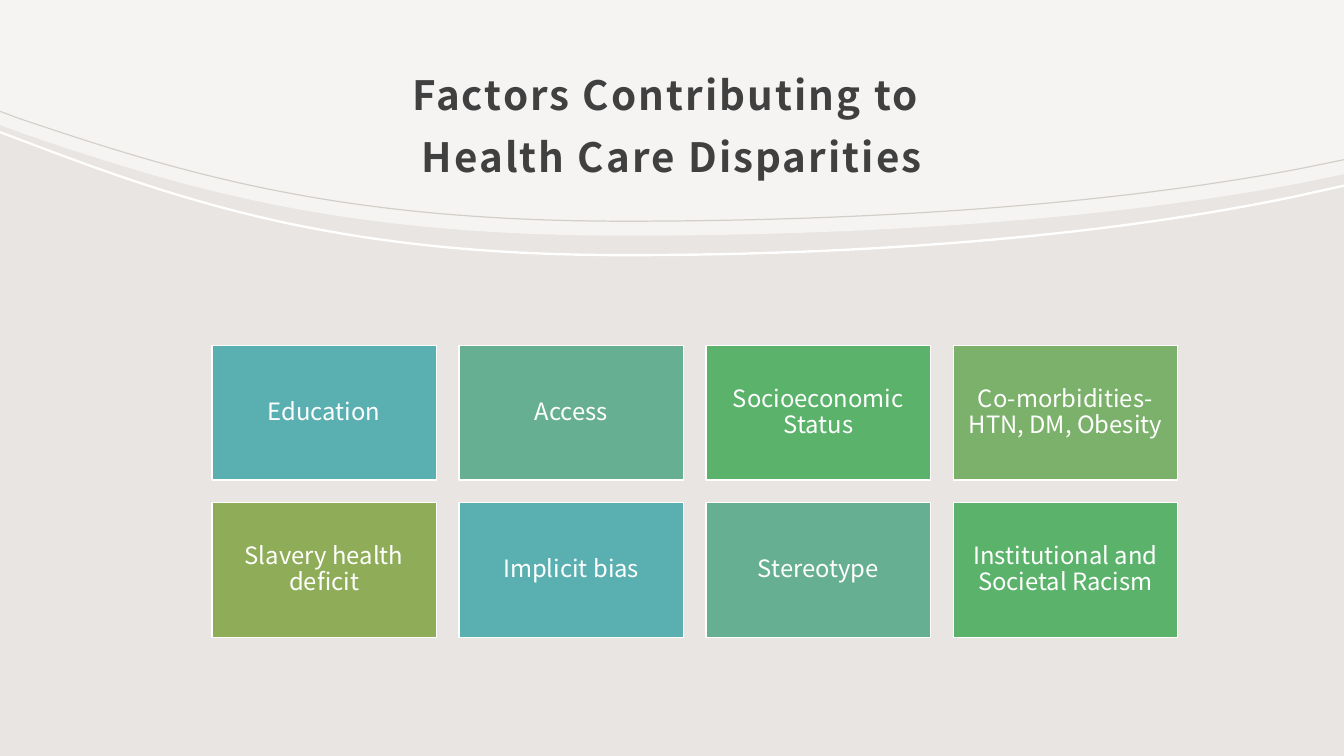
from copy import deepcopy
from pptx import Presentation
from pptx.dml.color import RGBColor
from pptx.enum.shapes import MSO_SHAPE
from pptx.enum.text import MSO_ANCHOR, MSO_AUTO_SIZE, PP_ALIGN
from pptx.oxml.ns import qn
from pptx.util import Cm, Pt
from lxml import etree

BACKGROUND = RGBColor(0xE8, 0xE5, 0xE2)
WHITE = RGBColor(0xFF, 0xFF, 0xFF)
GREY = RGBColor(0xD4, 0xCE, 0xC8)
DARK = RGBColor(0x40, 0x40, 0x40)
CARD_COLORS = [
    RGBColor(0x5A, 0xB0, 0xB1),
    RGBColor(0x67, 0xAF, 0x92),
    RGBColor(0x5B, 0xB3, 0x6B),
    RGBColor(0x7B, 0xB1, 0x6A),
    RGBColor(0x8F, 0xAD, 0x58),
]
FONT = "Noto Sans CJK JP"
WIDTH, HEIGHT = 33.87, 19.05
FACTORS = [
    "Education", "Access", "Socioeconomic Status", "Co-morbidities-HTN, DM, Obesity",
    "Slavery health deficit", "Implicit bias", "Stereotype", "Institutional and Societal Racism",
]

WAVE_X = [0, 0.48, 4.55, 8.46, 15.75, 22.23, 28.17, 32.74, WIDTH]
FILL_Y = [3.15, 3.33, 4.72, 5.94, 5.94, 5.94, 5.49, 4.62, 4.39]
WHITE_Y = [3.3, 3.48, 5.03, 6.4, 6.4, 6.4, 5.87, 4.9, 4.65]
GREY_Y = [2.79, 2.97, 4.34, 5.56, 5.56, 5.56, 5.11, 4.24, 4.01]


def curve_segments(sp, first_points):
    path = sp.element.spPr.find(".//" + qn("a:path"))
    segments = list(path)
    for first in first_points:
        curve = etree.Element(qn("a:cubicBezTo"))
        segments[first].addprevious(curve)
        for segment in segments[first:first + 3]:
            curve.append(segment[0])
            path.remove(segment)


def add_wave(s, left, top, ys, color, thickness=None, alpha=None):
    edge = list(zip(WAVE_X, ys))
    if thickness is None:
        upper, curves = [(0, 0), (WIDTH, 0)], [4, 7]
    else:
        upper, curves = edge, [2, 5, 11, 14]
    lower = [(x, y + (thickness or 0)) for x, y in edge[::-1]]
    outline = [(Cm(left + x), Cm(top + y)) for x, y in upper + lower]
    builder = s.shapes.build_freeform(*outline[0])
    builder.add_line_segments(outline[1:], close=True)
    sp = builder.convert_to_shape()
    curve_segments(sp, curves)
    sp.shadow.inherit = False
    sp.line.fill.background()
    sp.fill.solid()
    sp.fill.fore_color.rgb = color
    if alpha:
        clr = sp.element.spPr.find(".//" + qn("a:srgbClr"))
        etree.SubElement(clr, qn("a:alpha")).set("val", str(alpha * 1000))


def set_margins(tf, left, top, right, bottom):
    tf.margin_left, tf.margin_top = Cm(left), Cm(top)
    tf.margin_right, tf.margin_bottom = Cm(right), Cm(bottom)


def add_title(s, left, top, width, height):
    sp = s.shapes.title
    sp.element.getparent().append(sp.element)
    sp.left, sp.top, sp.width, sp.height = Cm(left), Cm(top), Cm(width), Cm(height)
    tf = sp.text_frame
    tf.text = "Factors Contributing to \vHealth Care Disparities"
    tf.word_wrap = True
    tf.auto_size = MSO_AUTO_SIZE.NONE
    tf.vertical_anchor = MSO_ANCHOR.MIDDLE
    set_margins(tf, 0.3, 0.3, 0.3, 0.25)
    p = tf.paragraphs[0]
    p.alignment = PP_ALIGN.CENTER
    p.line_spacing = 1.3
    for r in p.runs:
        r.font.name, r.font.size, r.font.bold = FONT, Pt(28.8), True
        r.font.color.rgb = DARK
        r.font._element.set("spc", "150")
    for br in p._p.findall(qn("a:br")):
        br.append(deepcopy(p.runs[0].font._element))


def add_card(s, left, top, width, height, text, color):
    sp = s.shapes.add_shape(MSO_SHAPE.RECTANGLE, Cm(left), Cm(top), Cm(width), Cm(height))
    sp.shadow.inherit = False
    sp.fill.solid()
    sp.fill.fore_color.rgb = color
    sp.line.color.rgb = WHITE
    sp.line.width = Pt(1)
    tf = sp.text_frame
    tf.text = text
    tf.word_wrap = True
    tf.vertical_anchor = MSO_ANCHOR.MIDDLE
    set_margins(tf, 0.18, 0.18, 0.18, 0.18)
    p = tf.paragraphs[0]
    p.alignment = PP_ALIGN.CENTER
    p.line_spacing = 0.9
    r = p.runs[0]
    r.font.name, r.font.size = FONT, Pt(17)
    r.font.color.rgb = WHITE


def add_factors(s, left, top, width, height, columns=4, rows=2, gap=0.57):
    card_w = (width - gap * (columns - 1)) / columns
    card_h = (height - gap * (rows - 1)) / rows
    for i, text in enumerate(FACTORS):
        row, column = divmod(i, columns)
        add_card(s, left + column * (card_w + gap), top + row * (card_h + gap),
                 card_w, card_h, text, CARD_COLORS[i % len(CARD_COLORS)])


def main():
    prs = Presentation()
    prs.slide_width, prs.slide_height = Cm(WIDTH), Cm(HEIGHT)
    s = prs.slides.add_slide(prs.slide_layouts[5])
    s.background.fill.solid()
    s.background.fill.fore_color.rgb = BACKGROUND
    add_wave(s, 0, 0, FILL_Y, WHITE, alpha=60)
    add_wave(s, 0, 0, WHITE_Y, WHITE, thickness=0.06)
    add_title(s, 3.39, 1.5, 27.09, 2.9)
    add_wave(s, 0, 0, GREY_Y, GREY, thickness=0.03)
    add_factors(s, 5.34, 8.7, 24.34, 7.36)
    prs.save("out.pptx")


if __name__ == "__main__":
    main()
